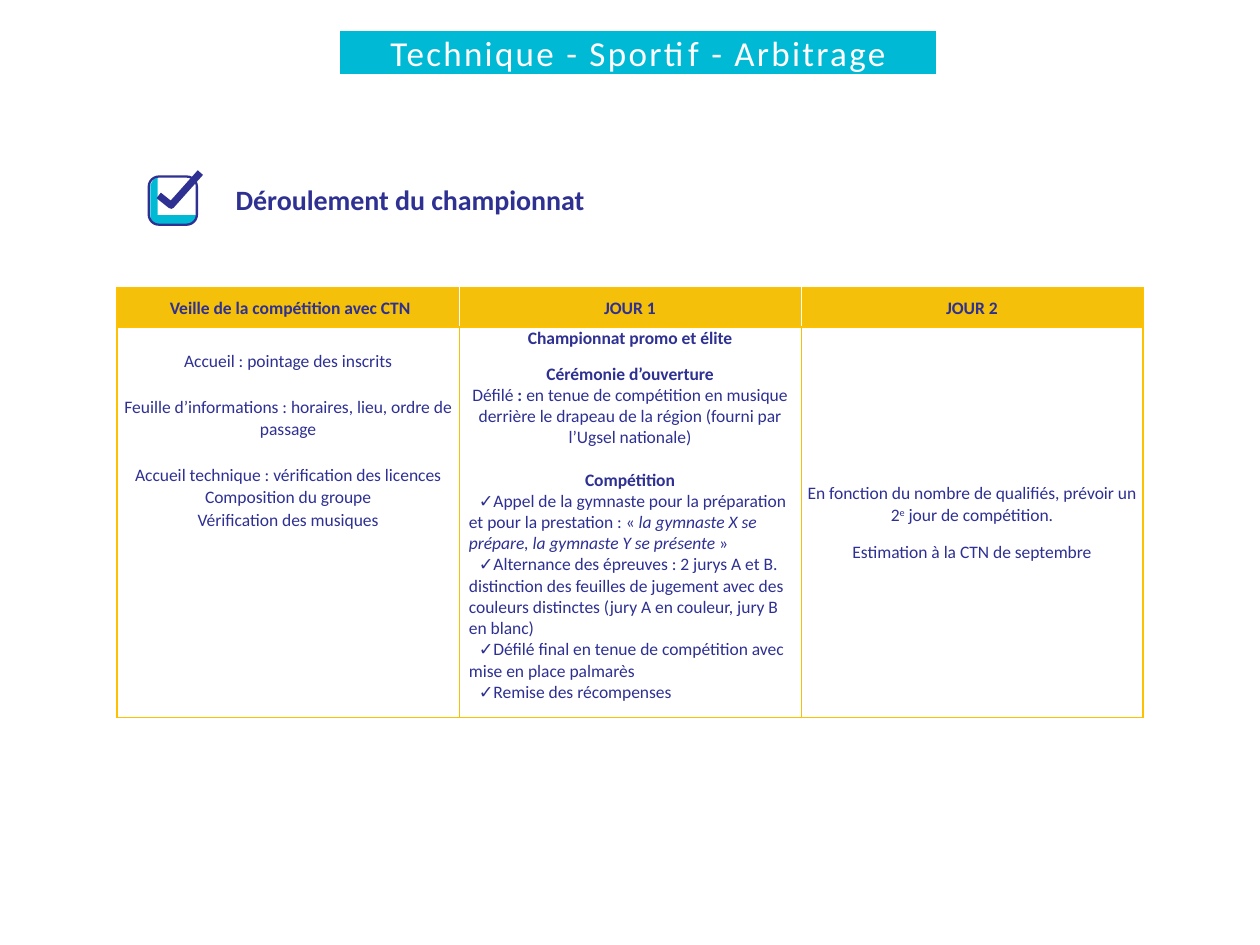
from pptx import Presentation
from pptx.dml.color import RGBColor
from pptx.enum.shapes import MSO_SHAPE
from pptx.enum.text import MSO_ANCHOR, MSO_AUTO_SIZE, PP_ALIGN
from pptx.oxml.ns import qn
from pptx.util import Cm, Pt
from lxml.etree import SubElement

NAVY, CYAN, GOLD, AMBER, WHITE = "2E3092", "00BAD5", "F4C009", "FFC000", "FFFFFF"


def rgb(value):
    return RGBColor.from_string(value)


def add_run(p, text, size=10, color=NAVY, bold=False, italic=False, spacing=0, raised=0):
    r = p.add_run()
    r.text = text
    r.font.name = "Calibri"
    r.font.size = Pt(size)
    r.font.color.rgb = rgb(color)
    r.font.bold = bold
    r.font.italic = italic
    rPr = r.font._element
    if spacing:
        rPr.set("spc", str(int(spacing * 100)))
    if raised:
        rPr.set("baseline", str(raised * 1000))


def set_margins(target, left=0, top=0, right=0, bottom=0):
    target.margin_left, target.margin_top = Cm(left), Cm(top)
    target.margin_right, target.margin_bottom = Cm(right), Cm(bottom)


def style_shape(sp, fill=None, line=None, width=1):
    sp.shadow.inherit = False
    if fill:
        sp.fill.solid()
        sp.fill.fore_color.rgb = rgb(fill)
    else:
        sp.fill.background()
    if line:
        sp.line.color.rgb = rgb(line)
        sp.line.width = Pt(width)
    else:
        sp.line.fill.background()


def add_banner(s, x, y, w, h):
    sp = s.shapes.add_shape(MSO_SHAPE.RECTANGLE, Cm(x), Cm(y), Cm(w), Cm(h))
    style_shape(sp, fill=CYAN)
    tf = sp.text_frame
    tf.word_wrap = True
    tf.auto_size = MSO_AUTO_SIZE.SHAPE_TO_FIT_TEXT
    tf.vertical_anchor = MSO_ANCHOR.TOP
    set_margins(tf)
    p = tf.paragraphs[0]
    p.alignment = PP_ALIGN.CENTER
    add_run(p, "Technique - Sportif - Arbitrage", size=20, color=WHITE, spacing=1.3)


def add_outline(s, x, y, points, close):
    start, *rest = [(Cm(x + dx), Cm(y + dy)) for dx, dy in points]
    builder = s.shapes.build_freeform(*start)
    builder.add_line_segments(rest, close=close)
    return builder.convert_to_shape()


def add_checkbox(s, x, y, side):
    shade = [(0.18, 0.1), (0.1, 0.13), (0.03, 0.25), (0.03, 0.91), (0.05, 0.99),
             (0.15, 1.04), (0.86, 1.04), (0.96, 0.91), (0.96, 0.86), (0.18, 0.86)]
    style_shape(add_outline(s, x, y, shade, True), fill=CYAN)
    sp = s.shapes.add_shape(MSO_SHAPE.ROUNDED_RECTANGLE, Cm(x), Cm(y + 0.08), Cm(side), Cm(side))
    sp.adjustments[0] = 0.21
    style_shape(sp, line=NAVY, width=1.3)
    tick = [(0.2, 0.46), (0.45, 0.66), (1.04, 0)]
    style_shape(add_outline(s, x, y, tick, False), line=NAVY, width=4)


def add_heading(s, x, y, w, h):
    tf = s.shapes.add_textbox(Cm(x), Cm(y), Cm(w), Cm(h)).text_frame
    tf.word_wrap = True
    tf.auto_size = MSO_AUTO_SIZE.SHAPE_TO_FIT_TEXT
    set_margins(tf, left=0.03, top=0.05)
    add_run(tf.paragraphs[0], "Déroulement du championnat", size=16, bold=True)


def set_borders(cell, left, right):
    tcPr = cell._tc.get_or_add_tcPr()
    edge = (AMBER, 1)
    for tag, (color, width) in zip(("lnL", "lnR", "lnT", "lnB"), (left, right, edge, edge)):
        ln = SubElement(tcPr, qn(f"a:{tag}"), w=str(Pt(width)))
        SubElement(SubElement(ln, qn("a:solidFill")), qn("a:srgbClr"), val=color)


def add_paragraph(tf, runs, first, align=PP_ALIGN.CENTER, before=0, after=0, leading=1, bullet=None):
    p = tf.paragraphs[0] if first else tf.add_paragraph()
    p.alignment = align
    p.space_before, p.space_after = Pt(before), Pt(after)
    p.line_spacing = leading
    if bullet:
        pPr = p._p.get_or_add_pPr()
        pPr.set("marL", str(Cm(0.1)))
        pPr.set("indent", str(Cm(0.2)))
        SubElement(pPr, qn("a:buFont"), typeface="Calibri")
        SubElement(pPr, qn("a:buChar"), char=bullet)
    for text, fmt in runs:
        add_run(p, text, **fmt)


def plain(text, **fmt):
    return [(text, fmt)]


def day_contents():
    loose = {"leading": 1.07}
    spaced = {"leading": 1.07, "after": 8}
    gap = {"leading": 1.07, "before": 13}
    check = {"align": PP_ALIGN.LEFT, "bullet": "✓"}
    bold = {"bold": True}
    eve = [
        (plain("Accueil : pointage des inscrits"), loose),
        (plain("Feuille d’informations : horaires, lieu, ordre de passage"), gap),
        (plain("Accueil technique : vérification des licences"), gap),
        (plain("Composition du groupe"), loose),
        (plain("Vérification des musiques"), loose),
    ]
    day_1 = [
        (plain("Championnat promo et élite", **bold), spaced),
        (plain("Cérémonie d’ouverture", **bold), {}),
        ([("Défilé", {}), (" : ", bold),
          ("en tenue de compétition en musique derrière le drapeau de la région "
           "(fourni par l’Ugsel nationale)", {})], {}),
        (plain("Compétition", **bold), {"before": 12}),
        ([("Appel de la gymnaste pour la préparation et pour la prestation : « ", {}),
          ("la gymnaste X se prépare, la gymnaste Y se présente ", {"italic": True}),
          ("»", {})], check),
        (plain("Alternance des épreuves : 2 jurys A et B. distinction des feuilles de jugement "
               "avec des couleurs distinctes (jury A en couleur, jury B en blanc)"), check),
        (plain("Défilé final en tenue de compétition avec mise en place palmarès"), check),
        (plain("Remise des récompenses"), check),
    ]
    day_2 = [
        ([("En fonction du nombre de qualifiés, prévoir un 2", {}), ("e", {"raised": 30}),
          (" jour de compétition.", {})], spaced),
        (plain("Estimation à la CTN de septembre"), spaced),
    ]
    titles = [" Veille de la compétition avec CTN", "JOUR 1", "JOUR 2"]
    header = [[(plain(title, **bold), spaced)] for title in titles]
    return [header, [eve, day_1, day_2]]


def add_schedule(s, x, y, w, heights):
    contents = day_contents()
    cols = len(contents[0])
    table = s.shapes.add_table(len(contents), cols, Cm(x), Cm(y), Cm(w), Cm(sum(heights))).table
    table.first_row = table.horz_banding = False
    for column in table.columns:
        column.width = Cm(w / cols)
    for i, (row, height) in enumerate(zip(contents, heights)):
        table.rows[i].height = Cm(height)
        inner, outer = (GOLD if i else WHITE, 0.5), (AMBER, 1)
        for j, paragraphs in enumerate(row):
            cell = table.cell(i, j)
            set_margins(cell, left=0.1, right=0.1, top=0.46 if (i, j) == (1, 0) else 0)
            middle = i == 0 or j == cols - 1
            cell.vertical_anchor = MSO_ANCHOR.MIDDLE if middle else MSO_ANCHOR.TOP
            set_borders(cell, inner if j else outer, inner if j < cols - 1 else outer)
            if i == 0:
                cell.fill.solid()
                cell.fill.fore_color.rgb = rgb(GOLD)
            else:
                cell.fill.background()
            for k, (runs, fmt) in enumerate(paragraphs):
                add_paragraph(cell.text_frame, runs, k == 0, **fmt)


def main():
    prs = Presentation()
    prs.slide_width, prs.slide_height = Cm(25.4), Cm(19.05)
    s = prs.slides.add_slide(prs.slide_layouts[6])
    add_schedule(s, 2.36, 5.8, 20.68, [0.79, 7.87])
    add_checkbox(s, 3, 3.48, 0.97)
    add_heading(s, 4.72, 3.63, 7.14, 0.71)
    add_banner(s, 6.86, 0.63, 12.01, 0.86)
    prs.save("out.pptx")


if __name__ == "__main__":
    main()
